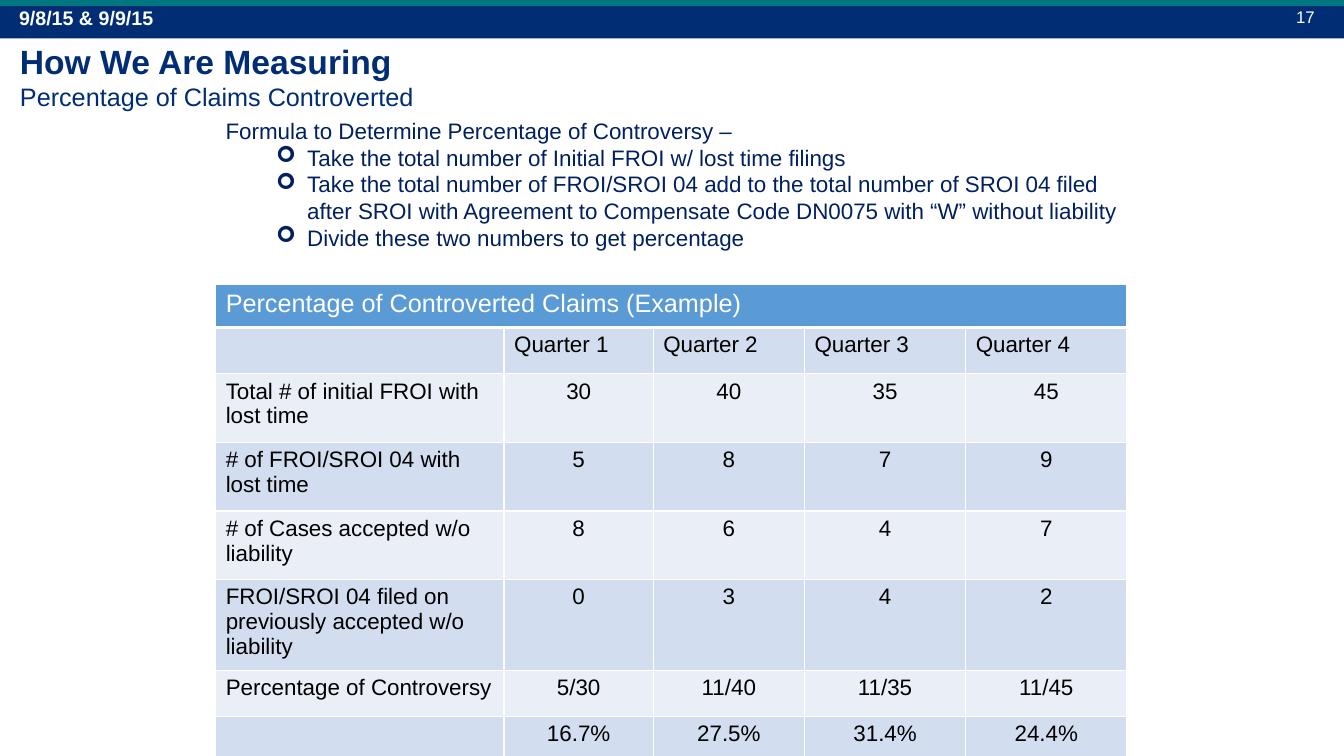
from lxml.etree import SubElement
from pptx import Presentation
from pptx.dml.color import RGBColor
from pptx.enum.shapes import MSO_SHAPE
from pptx.enum.text import MSO_ANCHOR, PP_ALIGN
from pptx.oxml.ns import qn
from pptx.util import Inches, Pt

WIDTH, HEIGHT = 13.33, 7.5
COLORS = {
    "navy": "002D73", "teal": "007681", "ink": "002060", "header": "5B9BD5",
    "dark band": "D2DEEF", "light band": "EAEFF7", "white": "FFFFFF", "black": "000000",
}
COLUMN_SHARES = [21.46, 11.1, 11.25, 12, 12]
ROW_SHARES = [5.73, 6.13, 9.07, 9.07, 9.07, 10.4, 6.13, 3.73]
TABLE_TITLE = "Percentage of Controverted Claims (Example)"
TABLE_ROWS = [
    ["", "Quarter 1", "Quarter 2", "Quarter 3", "Quarter 4"],
    ["Total # of initial FROI with lost time", "30", "40", "35", "45"],
    ["# of FROI/SROI 04 with lost time", "5", "8", "7", "9"],
    ["# of Cases accepted w/o liability", "8", "6", "4", "7"],
    ["FROI/SROI 04 filed on previously accepted w/o liability", "0", "3", "4", "2"],
    ["Percentage of Controversy", "5/30", "11/40", "11/35", "11/45"],
    ["", "16.7%", "27.5%", "31.4%", "24.4%"],
]
FORMULA_STEPS = [
    "Take the total number of Initial FROI w/ lost time filings",
    "Take the total number of FROI/SROI 04 add to the total number of SROI 04 filed "
    "after SROI with Agreement to Compensate Code DN0075 with “W” without liability",
    "Divide these two numbers to get percentage",
]


def color(name):
    return RGBColor.from_string(COLORS[name])


def across(share):
    return Inches(WIDTH * share / 100)


def down(share):
    return Inches(HEIGHT * share / 100)


def place(left, top, width, height):
    return across(left), down(top), across(width), down(height)


def add_span(para, text, size, ink, bold=False):
    span = para.add_run()
    span.text = text
    for name, value in {"name": "Arial", "size": Pt(size), "bold": bold}.items():
        setattr(span.font, name, value)
    span.font.color.rgb = color(ink)


def add_bar(page, area, fill):
    bar = page.shapes.add_shape(MSO_SHAPE.RECTANGLE, *place(*area))
    bar.shadow.inherit = False
    bar.fill.solid()
    bar.fill.fore_color.rgb = color(fill)
    bar.line.fill.background()


def add_box(page, area, anchor=MSO_ANCHOR.TOP):
    frame = page.shapes.add_textbox(*place(*area)).text_frame
    frame.word_wrap = True
    frame.vertical_anchor = anchor
    return frame


def add_label(page, area, text, size, align, bold=False):
    para = add_box(page, area, MSO_ANCHOR.MIDDLE).paragraphs[0]
    para.alignment = align
    add_span(para, text, size, "white", bold)


def add_heading(page):
    para = add_box(page, (0.75, 4.8, 67.8, 10.8)).paragraphs[0]
    add_span(para, "How We Are Measuring", 24, "navy", True)
    para.add_line_break()
    add_span(para, "Percentage of Claims Controverted", 18, "navy")


def add_bullet(para):
    properties = para._p.get_or_add_pPr()
    for name, value in {"marL": Inches(0.81), "indent": Inches(-0.31)}.items():
        properties.set(name, str(int(value)))
    SubElement(properties, qn("a:buFont"), typeface="Wingdings")
    SubElement(properties, qn("a:buChar"), char="➢")


def add_formula(page):
    frame = add_box(page, (16.05, 14.8, 67.89, 26.93))
    add_span(frame.paragraphs[0], "Formula to Determine Percentage of Controversy –", 16, "ink")
    for step in FORMULA_STEPS:
        para = frame.add_paragraph()
        add_bullet(para)
        add_span(para, step, 16, "ink")


def add_borders(cell, bottom):
    properties = cell._tc.get_or_add_tcPr()
    for side, points in {"lnL": 1, "lnR": 1, "lnT": 1, "lnB": bottom}.items():
        line = SubElement(properties, qn(f"a:{side}"), w=str(int(Pt(points))))
        fill = SubElement(line, qn("a:solidFill"))
        SubElement(fill, qn("a:srgbClr"), val=COLORS["white"])


def fill_cell(cell, text, size, ink, band, align=PP_ALIGN.LEFT, bottom=1):
    add_borders(cell, bottom)
    cell.fill.solid()
    cell.fill.fore_color.rgb = color(band)
    para = cell.text_frame.paragraphs[0]
    para.alignment = align
    add_span(para, text, size, ink)


def add_claims_table(page):
    area = place(16.05, 37.6, sum(COLUMN_SHARES), sum(ROW_SHARES))
    table = page.shapes.add_table(len(ROW_SHARES), len(COLUMN_SHARES), *area).table
    for column, share in zip(table.columns, COLUMN_SHARES):
        column.width = across(share)
    for row, share in zip(table.rows, ROW_SHARES):
        row.height = down(share)
    table.cell(0, 0).merge(table.cell(0, len(COLUMN_SHARES) - 1))
    fill_cell(table.cell(0, 0), TABLE_TITLE, 18, "white", "header", bottom=3)
    for r, texts in enumerate(TABLE_ROWS, 1):
        band = "dark band" if r % 2 else "light band"
        for c, text in enumerate(texts):
            align = PP_ALIGN.CENTER if r > 1 and c > 0 else PP_ALIGN.LEFT
            fill_cell(table.cell(r, c), text, 16, "black", band, align)


def main():
    deck = Presentation()
    deck.slide_width, deck.slide_height = Inches(WIDTH), Inches(HEIGHT)
    page = deck.slides.add_slide(deck.slide_layouts[6])
    add_bar(page, (0, 0.67, 100, 4.4), "navy")
    add_bar(page, (0, 0, 100, 0.8), "teal")
    add_label(page, (0.68, -0.27, 22.5, 5.33), "9/8/15 & 9/9/15", 14, PP_ALIGN.LEFT, True)
    add_claims_table(page)
    add_formula(page)
    add_heading(page)
    add_label(page, (76.07, -0.4, 22.5, 5.33), "17", 12, PP_ALIGN.RIGHT)
    deck.save("out.pptx")


if __name__ == "__main__":
    main()
